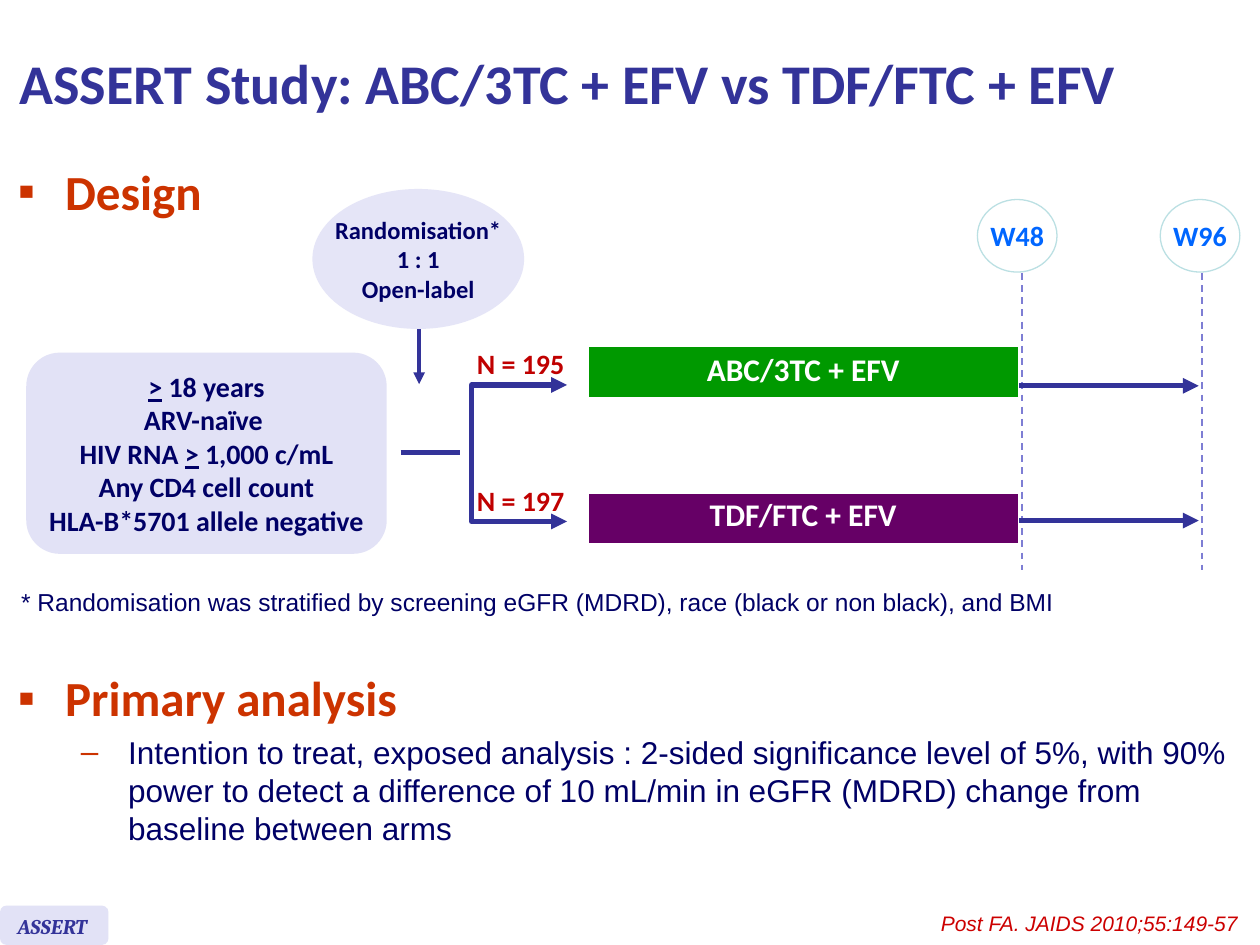
from dataclasses import dataclass
from typing import Optional

from lxml import etree
from pptx import Presentation
from pptx import util as u
from pptx.dml.color import RGBColor
from pptx.enum import dml, shapes, text
from pptx.oxml.ns import qn

Pt = u.Pt
INDIGO, NAVY, RUST, RED = "333399", "000066", "CC3300", "C00000"
LILAC, PALE, WHITE = "E2E2F6", "E5E5F7", "FFFFFF"
LEFT, CENTER = text.PP_ALIGN.LEFT, text.PP_ALIGN.CENTER
OVAL, ROUND = shapes.MSO_SHAPE.OVAL, shapes.MSO_SHAPE.ROUNDED_RECTANGLE


@dataclass
class Style:
    size: float
    color: str
    name: str = "Calibri"
    bold: bool = True
    italic: bool = False
    align: text.PP_ALIGN = CENTER


@dataclass
class Label:
    box: tuple
    lines: list
    style: Style
    geometry: Optional[shapes.MSO_SHAPE] = None  # None means a plain text box
    fill: str = WHITE
    outline: Optional[str] = None
    wrap: bool = False


@dataclass
class Line:
    start: tuple
    end: tuple
    color: str = INDIGO
    width: float = 3
    arrow: bool = False
    dash: bool = False


@dataclass
class Arm:
    box: tuple
    name: str
    fill: str
    spacing: float


@dataclass
class Bullet:
    text: str
    level: int
    char: str
    indent: float
    style: Style


def rgb(value: str) -> RGBColor:
    return RGBColor.from_string(value)


def points(values: tuple) -> list:
    return [Pt(v) for v in values]


def place(sp, box: tuple) -> None:
    for key, value in zip(("left", "top", "width", "height"), box):
        setattr(sp, key, Pt(value))


def write(p, content: str, st: Style) -> None:
    """Fill a paragraph; a ">" sign is underlined to read as "at least"."""
    p.alignment = st.align
    for part in filter(None, content.partition(">")):
        r = p.add_run()
        r.text = part
        fmt = {"size": Pt(st.size), "name": st.name, "bold": st.bold,
               "italic": st.italic, "underline": part == ">"}
        for key, value in fmt.items():
            setattr(r.font, key, value)
        r.font.color.rgb = rgb(st.color)


def add_arrowheads(sp, *ends: str) -> None:
    ln = sp.line._get_or_add_ln()
    for end in ends:
        etree.SubElement(ln, qn(f"a:{end}"), type="triangle")


def draw_label(slide, label: Label) -> None:
    if label.geometry is None:
        sp = slide.shapes.add_textbox(*points(label.box))
    else:
        sp = slide.shapes.add_shape(label.geometry, *points(label.box))
        sp.shadow.inherit = False
        sp.fill.solid()
        sp.fill.fore_color.rgb = rgb(label.fill)
        if label.outline:
            sp.line.color.rgb = rgb(label.outline)
            sp.line.width = Pt(0.75)
        else:
            sp.line.fill.background()
        sp.text_frame.vertical_anchor = text.MSO_ANCHOR.MIDDLE
    tf = sp.text_frame
    tf.word_wrap = label.wrap
    for i, content in enumerate(label.lines):
        write(tf.add_paragraph() if i else tf.paragraphs[0], content, label.style)


def draw_line(slide, line: Line) -> None:
    cx = slide.shapes.add_connector(shapes.MSO_CONNECTOR.STRAIGHT,
                                    *points(line.start + line.end))
    cx.line.color.rgb = rgb(line.color)
    cx.line.width = Pt(line.width)
    if line.dash:
        cx.line.dash_style = dml.MSO_LINE.DASH
    if line.arrow:
        add_arrowheads(cx, "tailEnd")
    etree.SubElement(cx._element.spPr, qn("a:effectLst"))


def draw_arm(slide, arm: Arm) -> None:
    table = slide.shapes.add_table(1, 1, *points(arm.box)).table
    table.first_row = table.horz_banding = False
    cell = table.cell(0, 0)
    cell.fill.solid()
    cell.fill.fore_color.rgb = rgb(arm.fill)
    cell.vertical_anchor = text.MSO_ANCHOR.MIDDLE
    p = cell.text_frame.paragraphs[0]
    p.line_spacing = arm.spacing
    write(p, arm.name, Style(18, WHITE))


def draw_fork(slide, stem_x: float, tip_x: float, top: float, bottom: float) -> None:
    fb = slide.shapes.build_freeform(Pt(tip_x), Pt(top))
    fb.add_line_segments([(Pt(x), Pt(y)) for x, y in
                          ((stem_x, top), (stem_x, bottom), (tip_x, bottom))], close=False)
    sp = fb.convert_to_shape()
    sp.shadow.inherit = False
    sp.fill.background()
    sp.line.color.rgb = rgb(INDIGO)
    sp.line.width = Pt(3)
    add_arrowheads(sp, "headEnd", "tailEnd")


def fill_list(holder, box: tuple, bullets: list) -> None:
    place(holder, box)
    tf = holder.text_frame
    tf.auto_size = text.MSO_AUTO_SIZE.NONE
    for i, b in enumerate(bullets):
        p = tf.add_paragraph() if i else tf.paragraphs[0]
        p.level = b.level
        pPr = p._p.get_or_add_pPr()
        pPr.set("marL", str(Pt(b.indent)))
        pPr.set("indent", str(-Pt(27)))
        color = etree.SubElement(pPr, qn("a:buClr"))
        etree.SubElement(color, qn("a:srgbClr"), val=RUST)
        etree.SubElement(pPr, qn("a:buFont"), typeface="Arial")
        etree.SubElement(pPr, qn("a:buChar"), char=b.char)
        p.space_before = Pt(0.2 * b.style.size if i else 0)
        write(p, b.text, b.style)


def main() -> None:
    prs = Presentation()
    prs.slide_width, prs.slide_height = Pt(720), Pt(540)
    slide = prs.slides.add_slide(prs.slide_layouts[3])
    title, design, analysis = slide.placeholders

    # Title and lists
    place(title, (4, 3.5, 688, 87))
    title.text_frame.vertical_anchor = text.MSO_ANCHOR.MIDDLE
    write(title.text_frame.paragraphs[0], "ASSERT Study: ABC/3TC + EFV vs TDF/FTC + EFV",
          Style(32, INDIGO, align=LEFT))
    heading = Style(28, RUST, align=LEFT)
    detail = Style(18, NAVY, "Arial", bold=False, align=LEFT)
    fill_list(design, (3, 88.5, 142.5, 45.5), [Bullet("Design", 0, "▪", 27, heading)])
    fill_list(analysis, (3, 378, 706, 126), [
        Bullet("Primary analysis", 0, "▪", 27, heading),
        Bullet("Intention to treat, exposed analysis : 2-sided significance level of 5%, "
               "with 90% power to detect a difference of 10 mL/min in eGFR (MDRD) change "
               "from baseline between arms", 1, "–", 63, detail)])

    # Treatment arms
    for arm in (Arm((336, 198, 246, 29.5), "ABC/3TC + EFV", "009900", 0.8),
                Arm((336, 282, 246, 29), "TDF/FTC + EFV", "660066", 0.7)):
        draw_arm(slide, arm)

    # Randomisation flow and follow-up
    draw_fork(slide, 269.5, 324, 220, 298)
    lines = [Line((239.5, 188), (239.5, 219.5), width=2.25, arrow=True),
             Line((229, 258.5), (263, 258.5))]
    lines += [Line((x, 156), (x, 326), "7E7ED4", 1, dash=True) for x in (584, 687)]
    lines += [Line((582.5, y), (685, y), arrow=True) for y in (220.5, 297.5)]
    for line in lines:
        draw_line(slide, line)

    # Population, visits, group sizes, footnote and footer
    count, visit = Style(16, RED), Style(16, "0066FF")
    labels = [
        Label((178.5, 108, 121, 80), ["Randomisation*", "1 : 1", "Open-label"],
              Style(14, NAVY), OVAL, PALE),
        Label((15, 201.5, 206, 115),
              ["> 18 years", "ARV-naïve ", "HIV RNA > 1,000 c/mL", "Any CD4 cell count",
               "HLA-B*5701 allele negative"], Style(16, NAVY), ROUND, LILAC),
        Label((5, 332, 607, 24.5),
              ["* Randomisation was stratified by screening eGFR (MDRD), "
               "race (black or non black), and BMI"],
              Style(14, NAVY, "Arial", bold=False, align=LEFT), wrap=True),
        Label((265, 194.5, 65, 26.5), ["N = 195"], count),
        Label((265, 272.5, 65, 26.5), ["N = 197"], count),
        Label((558.5, 114, 45.5, 41.5), ["W48"], visit, OVAL, outline="BBE0E3"),
        Label((663, 114, 45.5, 41.5), ["W96"], visit, OVAL, outline="BBE0E3"),
        Label((530.5, 516.5, 189.5, 21.5), ["Post FA. JAIDS 2010;55:149-57"],
              Style(12, "CC0000", "Arial", bold=False, italic=True, align=LEFT)),
        Label((0, 517.5, 62, 22.5), [], Style(12, INDIGO), ROUND, LILAC),
        Label((3, 518.5, 57, 21.5), ["ASSERT"],
              Style(12, INDIGO, "Cambria", italic=True, align=LEFT), wrap=True),
    ]
    for label in labels:
        draw_label(slide, label)

    prs.save("out.pptx")


if __name__ == "__main__":
    main()
